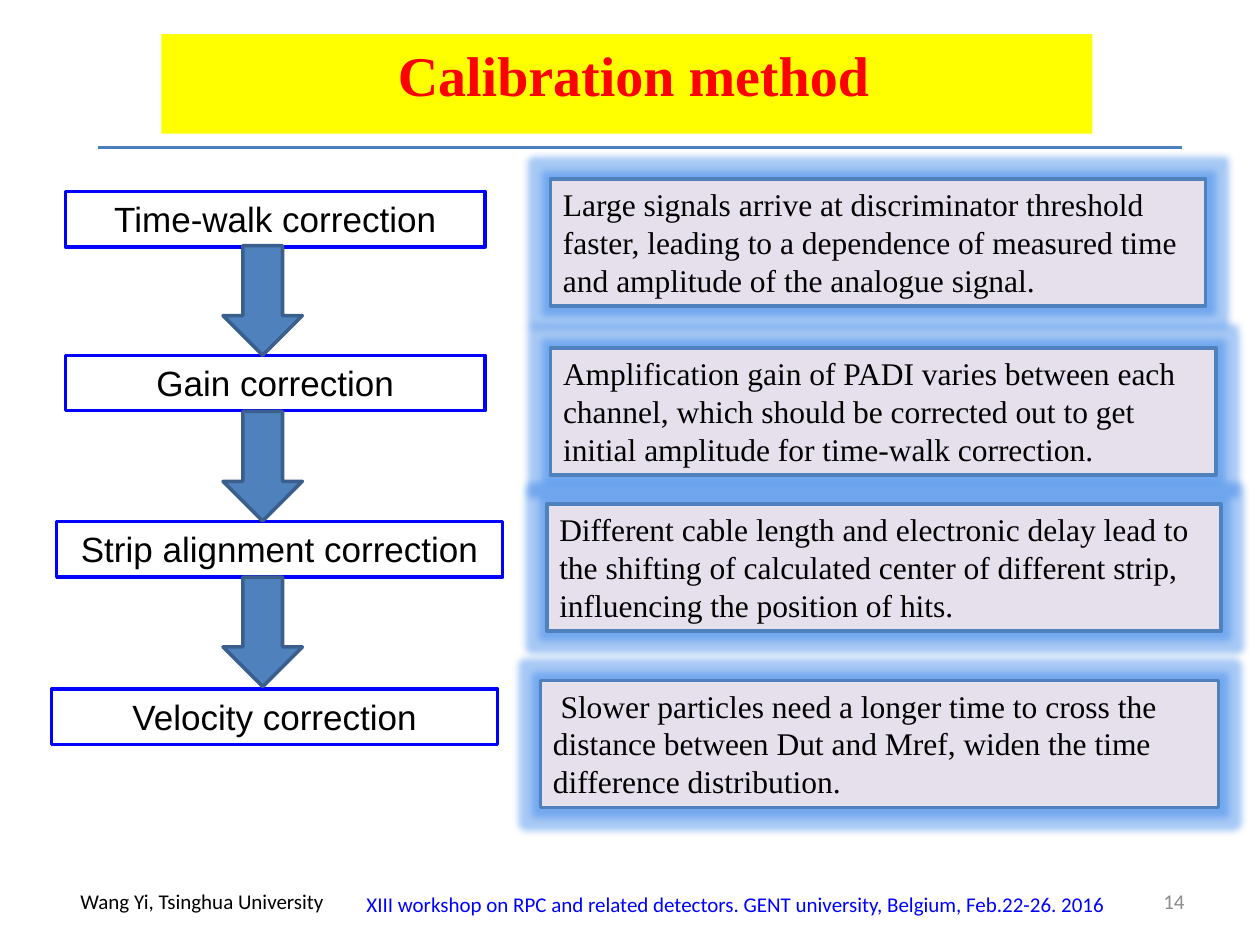
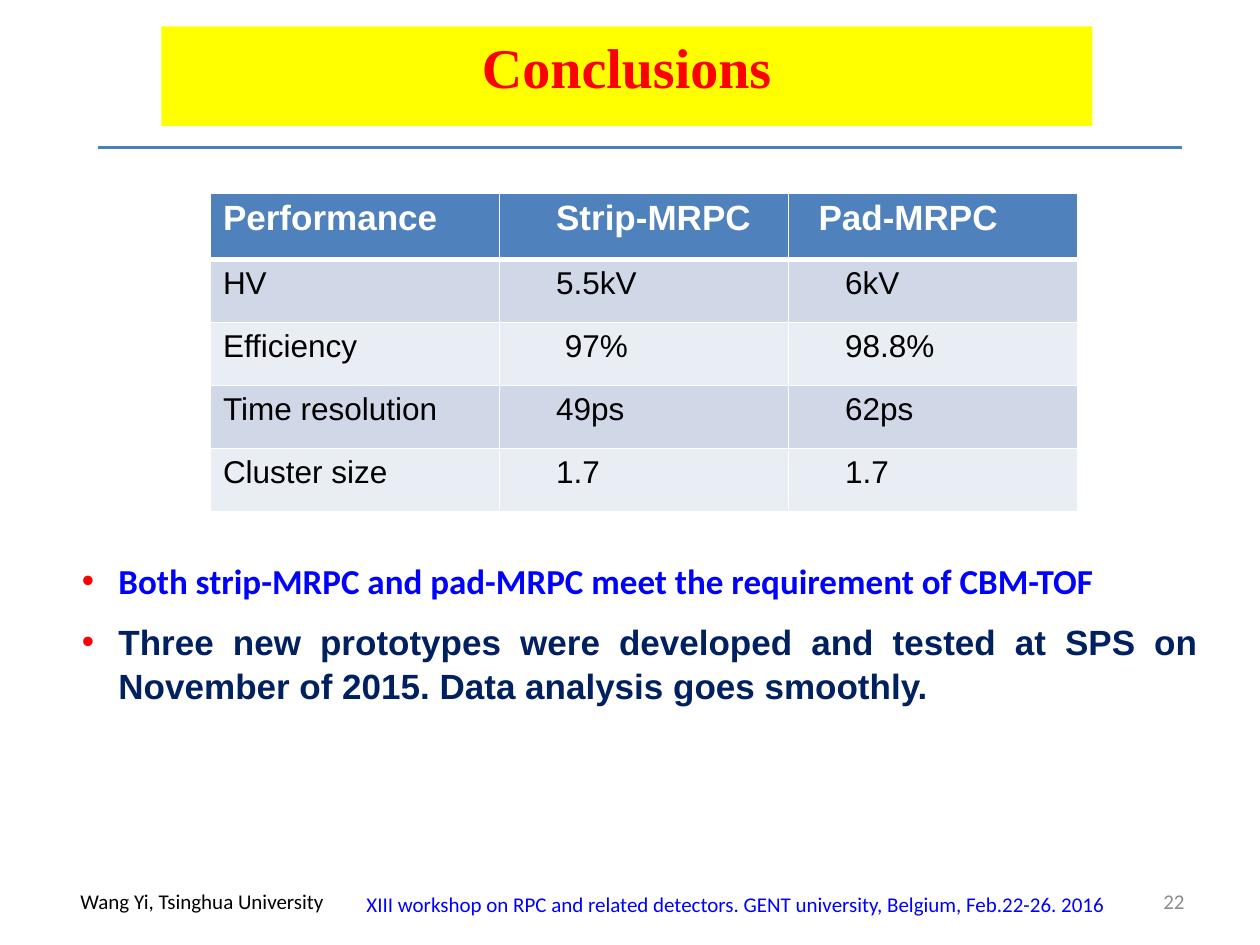
from lxml.etree import SubElement
from pptx import Presentation
from pptx.dml.color import RGBColor
from pptx.enum.shapes import MSO_CONNECTOR, MSO_SHAPE
from pptx.enum.text import MSO_ANCHOR, MSO_AUTO_SIZE, PP_ALIGN
from pptx.oxml.ns import qn
from pptx.util import Inches, Pt

HUES = {
    "yellow": "FFFF00", "red": "FF0000", "blue": "0000FF", "navy": "002060",
    "black": "000000", "white": "FFFFFF", "grey": "8C8C8C", "rule": "4B7EBC",
    "steel": "4F81BD", "edge": "3A5F8C", "lilac": "E6E0EC", "glow": "2578E7",
    "dark": "D0D8E8", "light": "E9EDF4",
}
SERIF = "Times New Roman"
STEPS = [
    ("Time-walk correction", (0.52, 1.52, 3.33, 0.44)),
    ("Gain correction", (0.52, 2.82, 3.33, 0.44)),
    ("Strip alignment correction", (0.45, 4.14, 3.54, 0.44)),
    ("Velocity correction", (0.41, 5.47, 3.54, 0.44)),
]
NOTES = [
    ("Large signals arrive at discriminator threshold faster, leading to a dependence "
     "of measured time and amplitude of the analogue signal.", (4.37, 1.42, 5.2, 1.01), 0),
    ("Amplification gain of PADI varies between each channel, which should be corrected "
     "out to get initial amplitude for time-walk correction.", (4.37, 2.76, 5.28, 1.01), 0),
    ("Different cable length and electronic delay lead to the shifting of calculated "
     "center of different strip, influencing the position of hits.", (4.34, 4, 5.35, 1.01), 0),
    ("Slower particles need a longer time to cross the distance between Dut and Mref, "
     "widen the time difference distribution.", (4.29, 5.4, 5.38, 1.01), 0.06),
]
RESULTS = [
    ("Performance", "Strip-MRPC", "Pad-MRPC"),
    ("HV", "5.5kV", "6kV"),
    ("Efficiency", "97%", "98.8%"),
    ("Time resolution", "49ps", "62ps"),
    ("Cluster size", "1.7", "1.7"),
]
INSETS = {(0, 2): 0.24, (2, 1): 0.52}
POINTS = [
    ("Both strip-MRPC and pad-MRPC meet the requirement of CBM-TOF", "Calibri", "blue"),
    ("Three new prototypes were developed and tested at SPS on November of 2015. "
     "Data analysis goes smoothly.", "Arial", "navy"),
]


def hue(name):
    """Return a named colour."""
    return RGBColor.from_string(HUES[name])


def place(shape, box):
    """Move a shape into a box given in inches."""
    shape.left, shape.top, shape.width, shape.height = map(Inches, box)


def style(para, size, font, color, bold=False, align=PP_ALIGN.LEFT):
    """Format a paragraph and its runs."""
    para.alignment = align
    for run in para.runs:
        run.font.size, run.font.name, run.font.bold = Pt(size), font, bold
        run.font.color.rgb = hue(color)


def add_note(slide, text, box, size, font, color, align=PP_ALIGN.LEFT, wrap=True):
    """Add a line of plain text."""
    area = slide.shapes.add_textbox(*map(Inches, box))
    area.text_frame.word_wrap = wrap
    area.text_frame.text = text
    style(area.text_frame.paragraphs[0], size, font, color, align=align)
    return area


def add_block(slide, kind, box, fill, line):
    """Add an outlined shape with no shadow."""
    shape = slide.shapes.add_shape(kind, *map(Inches, box))
    if fill:
        shape.fill.solid()
        shape.fill.fore_color.rgb = hue(fill)
    else:
        shape.fill.background()
    shape.line.color.rgb = hue(line)
    shape.line.width = Pt(2)
    shape.shadow.inherit = False
    return shape


def add_label(slide, text, box, size, font, fill, line, align):
    """Add a framed box with text at its top."""
    shape = add_block(slide, MSO_SHAPE.RECTANGLE, box, fill, line)
    frame = shape.text_frame
    frame.word_wrap, frame.vertical_anchor = True, MSO_ANCHOR.TOP
    frame.text = text
    style(frame.paragraphs[0], size, font, "black", align=align)
    return shape


def add_glow(shape):
    """Put a soft blue glow around a shape."""
    effect = shape._element.spPr.find(qn("a:effectLst"))
    glow = SubElement(effect, qn("a:glow"), rad=str(Pt(8)))
    color = SubElement(glow, qn("a:srgbClr"), val=HUES["glow"])
    SubElement(color, qn("a:alpha"), val="40000")


def add_base(deck, layout, title, top, page, shift=0):
    """Start a slide with its title band, rule and footer."""
    slide = deck.slides.add_slide(deck.slide_layouts[layout])
    band = slide.shapes.title
    place(band, (1.28, top, 7.39, 0.79))
    band.fill.solid()
    band.fill.fore_color.rgb = hue("yellow")
    frame = band.text_frame
    frame.text = title
    frame.auto_size, frame.vertical_anchor = MSO_AUTO_SIZE.NONE, MSO_ANCHOR.TOP
    frame.margin_left = Inches(0.1 + shift)
    style(frame.paragraphs[0], 32, SERIF, "red", True, PP_ALIGN.CENTER)

    rule = slide.shapes.add_connector(
        MSO_CONNECTOR.STRAIGHT, *map(Inches, (0.78, 1.17, 9.38, 1.17)))
    rule.line.color.rgb = hue("rule")
    rule.line.width = Pt(2)
    SubElement(rule._element.spPr, qn("a:effectLst"))

    add_note(slide, "XIII workshop on RPC and related detectors. GENT university, "
             "Belgium, Feb.22-26. 2016", (2.81, 7.03, 6.09, 0.31), 12, "Calibri", "blue")
    add_note(slide, "Wang Yi, Tsinghua University", (0.54, 7, 2.15, 0.3), 12,
             "Calibri", "black", wrap=False)
    count = add_note(slide, str(page), (7.17, 6.95, 2.33, 0.4), 12, "Calibri", "grey",
                     PP_ALIGN.RIGHT)
    count.text_frame.vertical_anchor = MSO_ANCHOR.MIDDLE
    return slide


def add_flow(slide, left, top, pitch):
    """Draw the steps and the arrows that join them."""
    for text, box in STEPS:
        add_label(slide, text, box, 20, "Arial", None, "blue", PP_ALIGN.CENTER)
    for row in range(len(STEPS) - 1):
        add_block(slide, MSO_SHAPE.DOWN_ARROW, (left, top + row * pitch, 0.63, 0.87),
                  "steel", "edge")


def add_notes(slide):
    """Draw the glowing notes beside the steps."""
    for text, box, indent in NOTES:
        shape = add_label(slide, text, box, 18, SERIF, "lilac", "steel", PP_ALIGN.LEFT)
        add_glow(shape)
        if indent:
            props = shape.text_frame.paragraphs[0]._p.get_or_add_pPr()
            props.set("indent", str(Inches(indent)))


def add_edges(cell, base):
    """Give a cell white borders."""
    props = cell._tc.get_or_add_tcPr()
    for side, width in (("L", 1), ("R", 1), ("T", base[0]), ("B", base[1])):
        line = SubElement(props, qn(f"a:ln{side}"), w=str(Pt(width)))
        fill = SubElement(line, qn("a:solidFill"))
        SubElement(fill, qn("a:srgbClr"), val=HUES["white"])


def add_grid(slide, box):
    """Draw the table of results."""
    table = slide.shapes.add_table(
        len(RESULTS), len(RESULTS[0]), *map(Inches, box)).table
    for row, values in enumerate(RESULTS):
        head = row == 0
        table.rows[row].height = Inches(0.53 if head else 0.5)
        fill = "steel" if head else ("light", "dark")[row % 2]
        for col, text in enumerate(values):
            cell = table.cell(row, col)
            cell.text = text
            cell.margin_left = Inches(INSETS.get((row, col), 0.45 if col else 0.1))
            add_edges(cell, (3 if row == 1 else 1, 3 if head else 1))
            cell.fill.solid()
            cell.fill.fore_color.rgb = hue(fill)
            style(cell.text_frame.paragraphs[0], 20 if head else 18, "Arial",
                  "white" if head else "black", head)


def add_points(slide, box):
    """Fill the body with the bulleted findings."""
    body = slide.placeholders[1]
    place(body, box)
    frame = body.text_frame
    frame.auto_size = MSO_AUTO_SIZE.NONE
    frame.text = "\n".join(text for text, _, _ in POINTS)
    for row, (para, (_, font, color)) in enumerate(zip(frame.paragraphs, POINTS)):
        props = para._p.get_or_add_pPr()
        props.set("marL", str(Inches(0.29)))
        props.set("indent", str(-Inches(0.29)))
        tint = SubElement(props, qn("a:buClr"))
        SubElement(tint, qn("a:srgbClr"), val=HUES["red"])
        SubElement(props, qn("a:buFont"), typeface="Arial")
        SubElement(props, qn("a:buChar"), char="•")
        para.space_before = Pt(10 if row else 0)
        para.line_spacing = 1.05
        style(para, 20, font, color, True, PP_ALIGN.JUSTIFY)


def main():
    """Build and save both slides."""
    deck = Presentation()
    deck.slide_width, deck.slide_height = Inches(10), Inches(7.5)
    method = add_base(deck, 5, "Calibration method", 0.27, 14, 0.11)
    add_flow(method, 1.77, 1.95, 1.315)
    add_notes(method)
    ending = add_base(deck, 1, "Conclusions", 0.21, 22)
    add_grid(ending, (1.67, 1.53, 6.88, 2.53))
    add_points(ending, (0.55, 4.37, 9.06, 1.34))
    deck.save("out.pptx")


if __name__ == "__main__":
    main()
